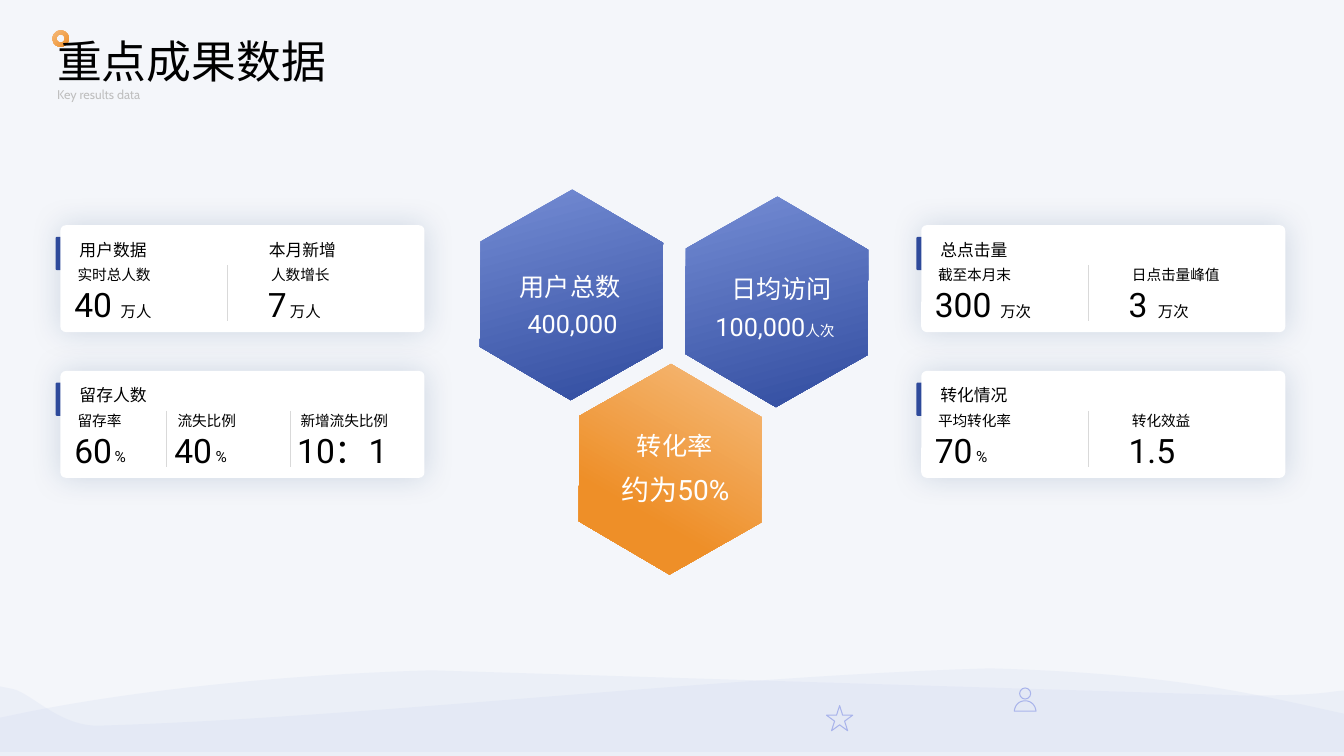
"""Build the key results data slide."""
from dataclasses import dataclass
from math import cos, radians, sin

from lxml.etree import SubElement
from pptx import Presentation
from pptx.dml.color import RGBColor
from pptx.enum.shapes import MSO_CONNECTOR as CONN, MSO_SHAPE as SHAPE
from pptx.enum.text import MSO_ANCHOR as ANCHOR, PP_ALIGN as ALIGN
from pptx.oxml.ns import qn
from pptx.util import Pt

WHITE = RGBColor(0xFF, 0xFF, 0xFF)
BLACK = RGBColor(0x00, 0x00, 0x00)
GREY = RGBColor(0xBF, 0xBF, 0xBF)
RULE = RGBColor(0xD9, 0xD9, 0xD9)
BACKDROP = RGBColor(0xEA, 0xEE, 0xF6)
HILL = RGBColor(0xD1, 0xD9, 0xF1)
ICON = RGBColor(0xA9, 0xB4, 0xEB)
NAVY = RGBColor(0x31, 0x4C, 0x9F)
SKY = RGBColor(0x74, 0x8C, 0xD4)
ORANGE = RGBColor(0xEE, 0x8F, 0x28)
PEACH = RGBColor(0xF5, 0xBC, 0x7E)
SHADOW = "09356A"
ROBOTO, CABIN = "Roboto", "Cabin"

Point = tuple[float, float]


@dataclass
class Text:
    x: float
    y: float
    w: float
    h: float
    runs: list[tuple[str, float]]
    font: str = ROBOTO
    color: RGBColor = BLACK
    align: ALIGN = ALIGN.LEFT
    anchor: ANCHOR = ANCHOR.TOP
    spacing: float = 1.0


@dataclass
class Metric:
    x: float
    label: str
    value: str
    unit: str = ""
    unit_dx: float = 0


@dataclass
class Card:
    x: float
    y: float
    titles: list[tuple[float, str]]
    metrics: list[Metric]
    rules: list[float]


@dataclass
class Hexagon:
    x: float
    y: float
    light: RGBColor
    dark: RGBColor
    stop: float
    angle: float
    texts: list[Text]


def flat(sp, color: RGBColor | None, alpha: int = 100):
    sp.shadow.inherit = False
    sp.line.fill.background()
    if color is None:
        sp.fill.background()
        return sp
    sp.fill.solid()
    sp.fill.fore_color.rgb = color
    if alpha < 100:
        clr = sp._element.spPr.find(".//" + qn("a:srgbClr"))
        SubElement(clr, qn("a:alpha"), val=str(alpha * 1000))
    return sp


def gradient(sp, light: RGBColor, dark: RGBColor, stop: float, angle: float) -> None:
    flat(sp, None)
    sp.fill.gradient()
    sp.fill.gradient_angle = 360 - angle
    for gs, color, pos in zip(sp.fill.gradient_stops, (light, dark), (0, stop)):
        gs.color.rgb, gs.position = color, pos


def outlined(sp) -> None:
    flat(sp, None)
    sp.line.color.rgb = ICON
    sp.line.width = Pt(0.75)


def preset(s, kind: SHAPE, x: float, y: float, w: float, h: float):
    return s.shapes.add_shape(kind, Pt(x), Pt(y), Pt(w), Pt(h))


def outline(s, start: Point, *segments: tuple[Point, ...], steps: int = 24):
    pts = [start]
    for seg in segments:
        if len(seg) == 1:
            pts.append(seg[0])
            continue
        ctrl = (pts[-1], *seg)
        for i in range(1, steps + 1):
            t = i / steps
            weights = ((1 - t) ** 3, 3 * t * (1 - t) ** 2, 3 * t * t * (1 - t), t ** 3)
            pts.append(tuple(sum(k * c[a] for k, c in zip(weights, ctrl)) for a in (0, 1)))
    emu = [(Pt(x), Pt(y)) for x, y in pts]
    fb = s.shapes.build_freeform(*emu[0])
    fb.add_line_segments(emu[1:], close=True)
    return fb.convert_to_shape()


def write(s, t: Text) -> None:
    tf = s.shapes.add_textbox(Pt(t.x), Pt(t.y), Pt(t.w), Pt(t.h)).text_frame
    tf.word_wrap = True
    tf.vertical_anchor = t.anchor
    p = tf.paragraphs[0]
    p.alignment, p.line_spacing = t.align, t.spacing
    for text, size in t.runs:
        r = p.add_run()
        r.text = text
        r.font.size, r.font.name = Pt(size), t.font
        r.font.color.rgb = t.color


def draw_card(s, c: Card) -> None:
    tab = flat(preset(s, SHAPE.ROUND_2_SAME_RECTANGLE, c.x - 12.2, c.y + 16.9, 23.8, 6.5), NAVY)
    tab.rotation = 270
    body = flat(preset(s, SHAPE.ROUNDED_RECTANGLE, c.x, c.y, 260, 76.3), WHITE)
    body.adjustments[0] = 0.05
    effects = body._element.spPr.find(qn("a:effectLst"))
    shadow = SubElement(effects, qn("a:outerShdw"), blurRad=str(Pt(22)), dist="0", dir="0",
                        algn="ctr", rotWithShape="0")
    clr = SubElement(shadow, qn("a:srgbClr"), val=SHADOW)
    SubElement(clr, qn("a:alpha"), val="17000")
    for dx, title in c.titles:
        write(s, Text(c.x + dx, c.y + 6.5, 170, 21.6, [(title, 12)]))
    for m in c.metrics:
        x = c.x + m.x
        write(s, Text(x + 2.4, c.y + 25.5, 114, 20.5, [(m.label, 10.5)], CABIN))
        write(s, Text(x, c.y + 38.5, 109.5, 36, [(m.value, 24)]))
        if m.unit:
            write(s, Text(x + m.unit_dx, c.y + 51, 56, 21, [(m.unit, 11)]))
    for dx in c.rules:
        x = Pt(c.x + dx)
        ln = s.shapes.add_connector(CONN.STRAIGHT, x, Pt(c.y + 28.5), x, Pt(c.y + 68.3))
        ln.line.color.rgb, ln.line.width = RULE, Pt(0.5)
        SubElement(ln._element.spPr, qn("a:effectLst"))


def draw_hexagon(s, h: Hexagon) -> None:
    turns = [radians(30.4 + 60 * k) for k in range(6)]
    pts = [(h.x + 75.2 * cos(a), h.y + 75.2 * sin(a)) for a in turns]
    gradient(outline(s, pts[0], *((pt,) for pt in pts[1:])), h.light, h.dark, h.stop, h.angle)
    for t in h.texts:
        t.color, t.align = WHITE, ALIGN.CENTER
        write(s, t)


LEFT, RIGHT, UPPER, LOWER = 43.2, 658.1, 160.9, 265
MID = ANCHOR.MIDDLE
CARDS = [
    Card(RIGHT, UPPER, [(6.5, "总点击量")],
         [Metric(2.5, "截至本月末", "300", "万次", 46.8),
          Metric(141, "日点击量峰值", "3", "万次", 20.9)], [119.5]),
    Card(RIGHT, LOWER, [(6.5, "转化情况")],
         [Metric(2.5, "平均转化率", "70", "%", 29.5), Metric(141, "转化效益", "1.5")], [119.5]),
    Card(LEFT, UPPER, [(6.5, "用户数据"), (141.8, "本月新增")],
         [Metric(2.8, "实时总人数", "40", "万人", 33.1),
          Metric(141, "人数增长", "7", "万人", 15.8)], [119.5]),
    Card(LEFT, LOWER, [(6.5, "留存人数")],
         [Metric(2.8, "留存率", "60", "%", 28.8), Metric(74.2, "流失比例", "40", "%", 29.5),
          Metric(162, "新增流失比例", "10：1")], [75.6, 164.2]),
]
HEXAGONS = [
    Hexagon(408.2, 210.6, SKY, NAVY, 1, 75,
            [Text(340.6, 188.6, 133.2, 32.4, [("用户总数", 18)], anchor=MID),
             Text(353.5, 215.3, 110.9, 31.7, [("400,000", 18)], anchor=MID)]),
    Hexagon(478.8, 335.2, PEACH, ORANGE, 0.7, 120,
            [Text(411.1, 334.1, 142.6, 31.7, [("约为50%", 20)]),
             Text(415.4, 299.5, 133.2, 32.4, [("转化率", 18)], CABIN, spacing=1.2)]),
    Hexagon(554.8, 215.6, SKY, NAVY, 1, 75,
            [Text(491.8, 190.1, 133.2, 32.4, [("日均访问", 18)], anchor=MID),
             Text(498.2, 217.4, 110.9, 31.7, [("100,000", 18), ("人次", 10.5)], anchor=MID)]),
]


def main() -> None:
    prs = Presentation()
    prs.slide_width, prs.slide_height = Pt(960), Pt(540)
    s = prs.slides.add_slide(prs.slide_layouts[6])
    flat(preset(s, SHAPE.RECTANGLE, 0, 0, 960, 540), BACKDROP, 50)
    gradient(preset(s, SHAPE.DONUT, 37.4, 21.6, 11.9, 11.9), PEACH, ORANGE, 1, 45)
    write(s, Text(33.8, 25.9, 460, 39.6, [("重点成果数据", 32)], anchor=MID, spacing=0.9))
    write(s, Text(33.8, 61.2, 460, 14.4, [("Key results data", 9)], CABIN, GREY,
                  anchor=MID, spacing=0.9))
    for c in CARDS:
        draw_card(s, c)
    for h in HEXAGONS:
        draw_hexagon(s, h)
    flat(outline(s, (308.2, 478.8), ((890.6, 496.8),),
                 ((918.7, 496.8), (938.9, 496.1), (953.3, 493.9)), ((960, 493.2),),
                 ((960, 540),), ((0, 540),), ((0, 512.6),), ((3.6, 511.9),),
                 ((72, 496.8), (182.9, 482.4), (308.2, 478.8))), HILL, 24)
    flat(outline(s, (707, 477.4), ((512.6, 483.1), (263.5, 512.6), (69.8, 518.4)),
                 ((41, 518.4), (20.9, 493.2), (7.2, 491.8)), ((0, 490.3),), ((0, 537.1),),
                 ((960, 537.1),), ((960, 509.8),), ((956.2, 509),),
                 ((888.5, 493.9), (832.3, 481), (707, 477.4))), HILL, 24)
    outlined(outline(s, (740, 508), ((724.5, 508),), ((725, 503.5), (728, 500.6), (732.2, 500.6)),
                     ((736.4, 500.6), (739.5, 503.5), (740, 508))))
    outlined(preset(s, SHAPE.OVAL, 728.3, 491.4, 7.9, 7.9))
    outlined(preset(s, SHAPE.STAR_5_POINT, 590.4, 504, 18.7, 18))
    prs.save("out.pptx")


if __name__ == "__main__":
    main()
